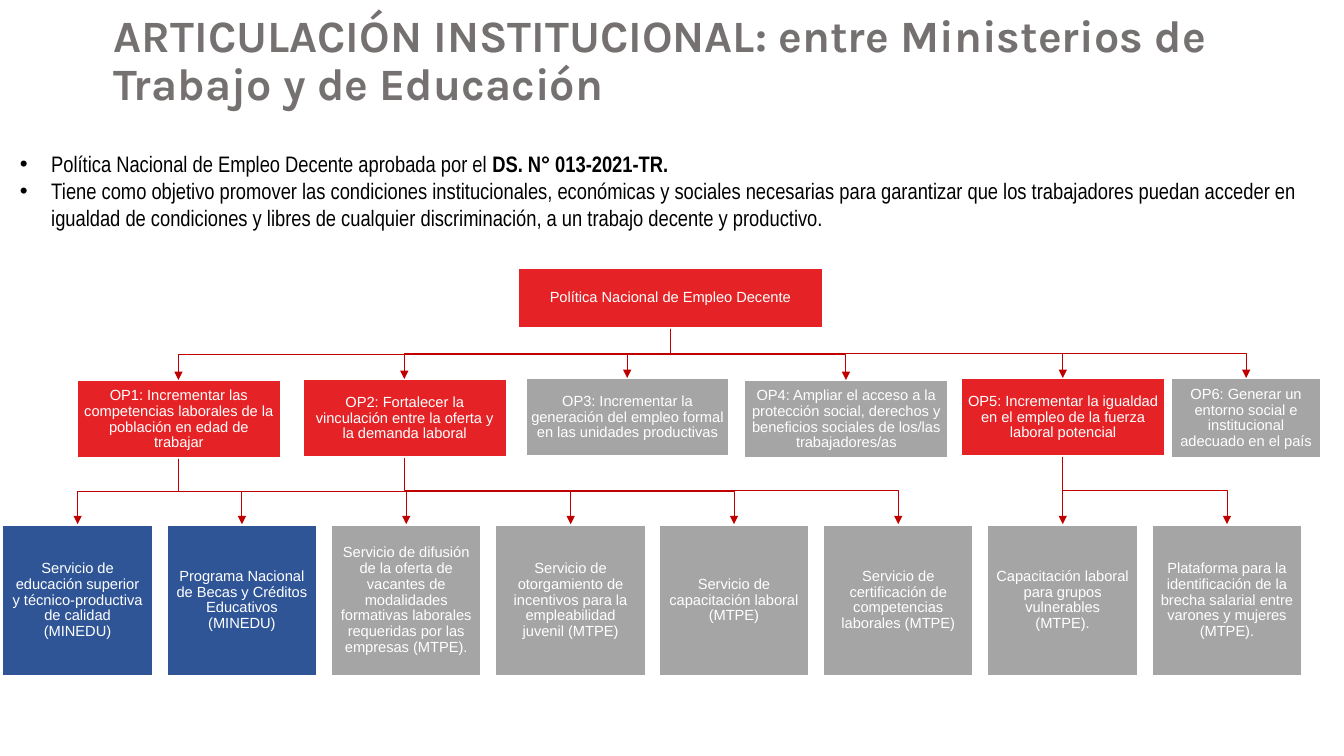
"""Build the slide on the decent employment policy and its services."""
from dataclasses import dataclass

from lxml import etree
from pptx import Presentation
from pptx import util as u
from pptx.dml.color import RGBColor
from pptx.enum import shapes, text
from pptx.oxml.ns import qn

SCALE = 9144


@dataclass(frozen=True)
class Theme:
    """Colours, fonts and type sizes of the slide."""
    red: str = "E52327"
    blue: str = "2F5597"
    gray: str = "A5A5A5"
    white: str = "FFFFFF"
    black: str = "000000"
    title: str = "767171"
    arrow: str = "C00000"
    head: str = "Karla"
    body: str = "Arial Narrow"
    label: str = "Arial"
    big: float = 32
    mid: float = 16
    small: float = 10.5


@dataclass(frozen=True)
class Box:
    """A filled label box, measured in px."""
    words: str
    fill: str
    left: int
    top: int
    width: int
    height: int
    inset: int = 6

    @property
    def mid(self) -> int:
        """Return the horizontal centre."""
        return self.left + self.width // 2

    @property
    def foot(self) -> int:
        """Return the bottom edge."""
        return self.top + self.height


T = Theme()

POLICY = Box("Política Nacional de Empleo Decente", T.red, 513, 265, 304, 61)

GOALS = [
    Box("OP1: Incrementar las competencias laborales de la población en edad de trabajar",
        T.red, 76, 377, 203, 78),
    Box("OP2: Fortalecer la vinculación entre la oferta y la demanda laboral",
        T.red, 300, 376, 203, 78),
    Box("OP3: Incrementar la generación del empleo formal en las unidades productivas",
        T.gray, 521, 375, 203, 78),
    Box("OP4: Ampliar el acceso a la protección social, derechos y beneficios sociales "
        "de los/las trabajadores/as", T.gray, 738, 377, 203, 78),
    Box("OP5: Incrementar la igualdad en el empleo de la fuerza laboral potencial",
        T.red, 953, 375, 203, 78),
    Box("OP6: Generar un entorno social e institucional adecuado en el país",
        T.gray, 1161, 375, 150, 80),
]

TASKS = [
    "Servicio de educación superior y técnico-productiva de calidad (MINEDU)",
    "Programa Nacional de Becas y Créditos Educativos (MINEDU)",
    "Servicio de difusión de la oferta de vacantes de modalidades formativas laborales "
    "requeridas por las empresas (MTPE).",
    "Servicio de otorgamiento de incentivos para la empleabilidad juvenil (MTPE)",
    "Servicio de capacitación laboral (MTPE)",
    "Servicio de certificación de competencias laborales (MTPE)",
    "Capacitación laboral para grupos vulnerables (MTPE).",
    "Plataforma para la identificación de la brecha salarial entre varones y mujeres (MTPE).",
]
UNITS = [
    Box(words, T.blue if "MINEDU" in words else T.gray,
        round(2 + i * 1140 / 7), 520, 150, 151, 9)
    for i, words in enumerate(TASKS)
]
LINKS = {0: UNITS[:5], 1: UNITS[5:6], 4: UNITS[6:]}

POINTS = [
    [("Política Nacional de Empleo Decente aprobada por el ", False),
     ("DS. N° 013-2021-TR.", True)],
    [("Tiene como objetivo promover las condiciones institucionales, económicas y sociales "
      "necesarias para garantizar que los trabajadores puedan acceder en igualdad de "
      "condiciones y libres de cualquier discriminación, a un trabajo decente y productivo.",
      False)],
]


def px(size: float) -> u.Emu:
    """Turn px into EMU."""
    return u.Emu(round(size * SCALE))


def add_run(para, words: str, face: str, size: float, tint: str, bold: bool = False) -> None:
    """Add one formatted run."""
    run = para.add_run()
    run.text = words
    run.font.name = face
    run.font.size = u.Pt(size)
    run.font.bold = bold
    run.font.color.rgb = RGBColor.from_string(tint)


def add_title(slide) -> None:
    """Move, format and fill the title."""
    title = slide.shapes.title
    title.left, title.top, title.width, title.height = map(px, (98, 7, 1203, 109))
    title.fill.solid()
    title.fill.fore_color.rgb = RGBColor.from_string(T.white)
    frame = title.text_frame
    frame.word_wrap = True
    frame.auto_size = text.MSO_AUTO_SIZE.NONE
    frame.vertical_anchor = text.MSO_ANCHOR.MIDDLE
    frame.margin_left = frame.margin_right = px(15)
    para = frame.paragraphs[0]
    para.alignment = text.PP_ALIGN.LEFT
    para.line_spacing = 0.9
    add_run(para, "ARTICULACIÓN INSTITUCIONAL: entre Ministerios de Trabajo y de Educación",
            T.head, T.big, T.title, True)


def add_points(slide) -> None:
    """Add the bulleted introduction."""
    frame = slide.shapes.add_textbox(*map(px, (10, 144, 1287, 91))).text_frame
    frame.word_wrap = True
    frame.auto_size = text.MSO_AUTO_SIZE.SHAPE_TO_FIT_TEXT
    for i, runs in enumerate(POINTS):
        para = frame.add_paragraph() if i else frame.paragraphs[0]
        props = para._p.get_or_add_pPr()
        props.set("marL", str(px(31)))
        props.set("indent", str(px(-31)))
        tint = etree.SubElement(props, qn("a:buClr"))
        etree.SubElement(tint, qn("a:srgbClr"), val=T.black)
        etree.SubElement(props, qn("a:buFont"), typeface=T.label)
        etree.SubElement(props, qn("a:buChar"), char="•")
        for words, bold in runs:
            add_run(para, words, T.body, T.mid, T.black, bold)


def add_box(slide, box: Box) -> None:
    """Draw one label box."""
    shape = slide.shapes.add_shape(
        shapes.MSO_SHAPE.RECTANGLE, *map(px, (box.left, box.top, box.width, box.height)))
    shape.shadow.inherit = False
    shape.fill.solid()
    shape.fill.fore_color.rgb = RGBColor.from_string(box.fill)
    shape.line.color.rgb = RGBColor.from_string(T.white)
    shape.line.width = u.Pt(2)
    frame = shape.text_frame
    frame.word_wrap = True
    frame.vertical_anchor = text.MSO_ANCHOR.MIDDLE
    frame.margin_left = frame.margin_right = px(box.inset)
    frame.margin_top = frame.margin_bottom = px(box.inset)
    para = frame.paragraphs[0]
    para.alignment = text.PP_ALIGN.CENTER
    para.line_spacing = 0.9
    add_run(para, box.words, T.label, T.small, T.white)


def add_link(slide, start: Box, end: Box) -> None:
    """Draw an elbow arrow from the foot of one box to the top of another."""
    mid, level = (start.mid + end.mid) / 2, (start.foot + end.top) / 2
    half, rise = (end.top - start.foot) / 2, abs(end.mid - start.mid) / 2
    right = end.mid > start.mid
    side = -half if right else half
    link = slide.shapes.add_connector(
        shapes.MSO_CONNECTOR.ELBOW,
        *map(px, (mid - side, level - rise, mid + side, level + rise)))
    link.line.color.rgb = RGBColor.from_string(T.arrow)
    link.line.width = u.Pt(0.75)
    props = link._element.spPr
    props.find(qn("a:xfrm")).set("rot", str((270 if right else 90) * 60000))
    etree.SubElement(props.find(qn("a:ln")), qn("a:tailEnd"), type="triangle")
    etree.SubElement(props, qn("a:effectLst"))


def main() -> None:
    """Build and save the slide."""
    deck = Presentation()
    deck.slide_width, deck.slide_height = px(1333), px(750)
    slide = deck.slides.add_slide(deck.slide_layouts[5])
    add_title(slide)
    add_points(slide)
    for box in [POLICY, *GOALS, *UNITS]:
        add_box(slide, box)
    for goal in GOALS:
        add_link(slide, POLICY, goal)
    for i, units in LINKS.items():
        for unit in units:
            add_link(slide, GOALS[i], unit)
    deck.save("out.pptx")


if __name__ == "__main__":
    main()
